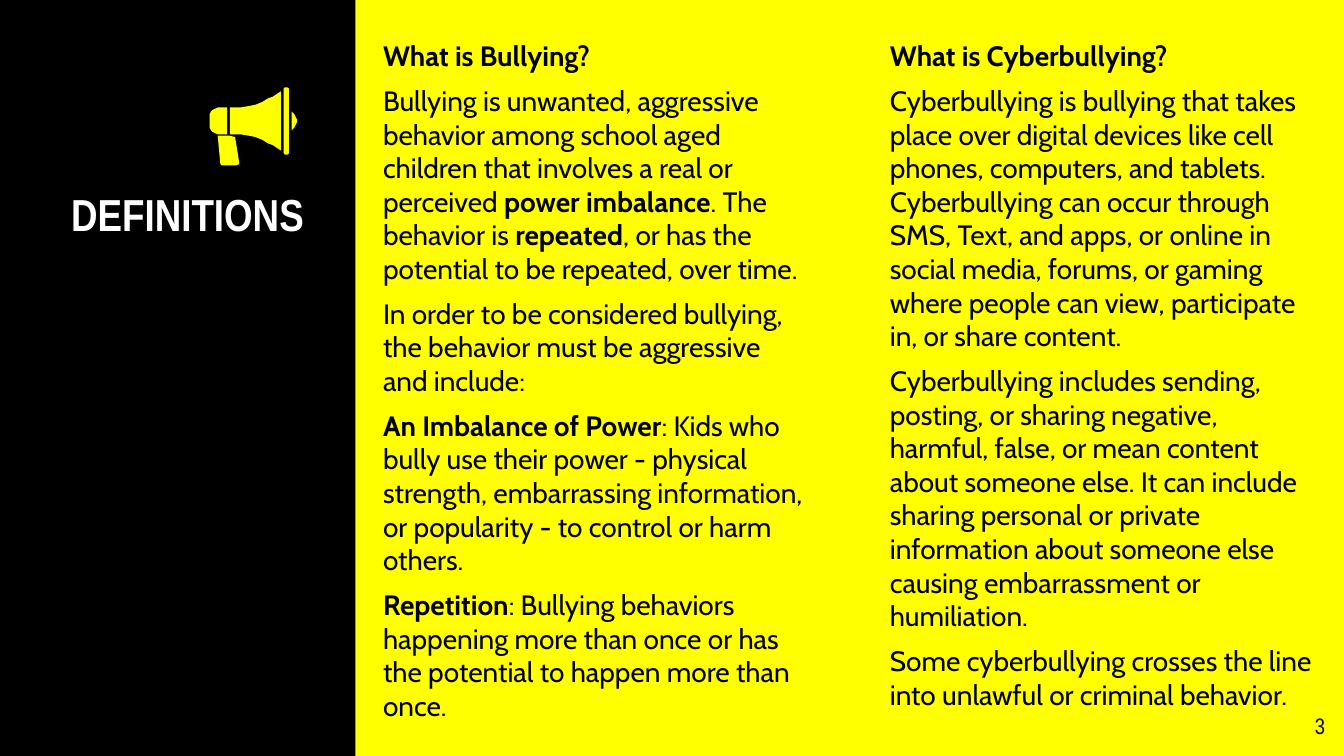
import pptx
import pptx.util
import pptx.dml.color
import pptx.enum.shapes
import pptx.enum.text
import pptx.oxml.ns
import lxml.etree

Pt = pptx.util.Pt
ALIGN = pptx.enum.text.PP_ALIGN
ANCHOR = pptx.enum.text.MSO_ANCHOR

COLORS = {"yellow": "FFFF00", "black": "000000", "white": "FFFFFF"}
HEADING_FONT = "Arial Narrow"
BODY_FONT = "Cabin"

BULLYING = [
    "**What is Bullying?**",
    "Bullying is unwanted, aggressive behavior among school aged children that involves "
    "a real or perceived **power imbalance**. The behavior is **repeated**, or has the "
    "potential to be repeated, over time.",
    "In order to be considered bullying, the behavior must be aggressive and include:",
    "**An Imbalance of Power**: Kids who bully use their power - physical strength, "
    "embarrassing information, or popularity - to control or harm others.",
    "**Repetition**: Bullying behaviors happening more than once or has the potential "
    "to happen more than once.",
]
CYBERBULLYING = [
    "**What is Cyberbullying?**",
    "Cyberbullying is bullying that takes place over digital devices like cell phones, "
    "computers, and tablets. Cyberbullying can occur through SMS, Text, and apps, or "
    "online in social media, forums, or gaming where people can view, participate in, "
    "or share content.",
    "Cyberbullying includes sending, posting, or sharing negative, harmful, false, or "
    "mean content about someone else. It can include sharing personal or private "
    "information about someone else causing embarrassment or humiliation.",
    "Some cyberbullying crosses the line into unlawful or criminal behavior.",
]

MEGAPHONE_UNIT = Pt(0.72)
HANDLE = [(162, 101), (164, 122), (165, 123), (176, 123), (178, 122), (178, 121),
          (175, 102), (171, 101)]
UPPER_HALVES = {
    "knob": [(217, 83), (218, 84), (219, 85), (220, 87), (221, 89)],
    "back": [(169, 80), (162, 80), (160, 81), (158, 82), (157, 83), (156, 85)],
    "cone": [(209, 68), (206, 70), (203, 72), (200, 73), (195, 76), (190, 78),
             (185, 79), (179, 80), (171, 80)],
    "rim": [(214, 65), (212, 65), (211, 66)],
}
RIM_RIGHT = [(215, 66)]


def mirrored(upper, axis=90):
    return upper + [(x, 2 * axis - y) for x, y in reversed(upper)]


class SlideBuilder:
    def __init__(self, deck):
        self.slide = deck.slides.add_slide(deck.slide_layouts[3])
        self.paint(self.slide.background.fill, "yellow")

    def paint(self, fill, color):
        fill.solid()
        fill.fore_color.rgb = pptx.dml.color.RGBColor.from_string(COLORS[color])

    def style_shape(self, shape, color):
        self.paint(shape.fill, color)
        shape.line.fill.background()
        shape.shadow.inherit = False

    def place(self, box, left, top, width, height, anchor=ANCHOR.TOP):
        box.left, box.top = Pt(left), Pt(top)
        box.width, box.height = Pt(width), Pt(height)
        frame = box.text_frame
        frame.word_wrap = True
        frame.auto_size = pptx.enum.text.MSO_AUTO_SIZE.NONE
        frame.vertical_anchor = anchor
        frame.margin_left = frame.margin_right = Pt(7.2)
        frame.margin_top = frame.margin_bottom = Pt(7.2)
        return frame

    def add_span(self, para, text, font, size, color, bold=False):
        span = para.add_run()
        span.text = text
        span.font.name, span.font.size, span.font.bold = font, Pt(size), bold
        span.font.color.rgb = pptx.dml.color.RGBColor.from_string(COLORS[color])

    def panel(self, left, top, width, height):
        panel = self.slide.shapes.add_shape(
            pptx.enum.shapes.MSO_SHAPE.RECTANGLE, Pt(left), Pt(top), Pt(width), Pt(height))
        self.style_shape(panel, "black")
        self.slide.shapes._spTree.insert(2, panel._element)

    def title(self, text, *bounds):
        para = self.place(self.slide.shapes.title, *bounds).paragraphs[0]
        para.alignment = ALIGN.RIGHT
        para.line_spacing = 1.15
        self.add_span(para, text, HEADING_FONT, 24, "white", True)

    def column(self, index, texts, *bounds):
        frame = self.place(self.slide.placeholders[index], *bounds)
        for number, text in enumerate(texts):
            para = frame.add_paragraph() if number else frame.paragraphs[0]
            para.space_before = Pt(6)
            properties = para._p.get_or_add_pPr()
            properties.set("marL", "0")
            properties.set("indent", "0")
            lxml.etree.SubElement(properties, pptx.oxml.ns.qn("a:buNone"))
            for part, words in enumerate(text.split("**")):
                if words:
                    self.add_span(para, words, BODY_FONT, 15, "black", part % 2 == 1)

    def page_number(self, text, *bounds):
        box = self.slide.shapes.add_textbox(0, 0, 0, 0)
        para = self.place(box, *bounds, anchor=ANCHOR.MIDDLE).paragraphs[0]
        para.alignment = ALIGN.RIGHT
        self.add_span(para, text, HEADING_FONT, 12, "black")

    def icon(self, outlines):
        group = self.slide.shapes.add_group_shape()
        for points in outlines:
            builder = group.shapes.build_freeform(*points[0], scale=MEGAPHONE_UNIT)
            builder.add_line_segments(points[1:], close=True)
            self.style_shape(builder.convert_to_shape(), "yellow")


def main():
    deck = pptx.Presentation()
    deck.slide_width, deck.slide_height = Pt(720), Pt(405)
    page = SlideBuilder(deck)
    page.panel(0, 0, 190.5, 405)
    page.title("DEFINITIONS", 25, 88.5, 145, 116.5)
    halves = {name: mirrored(upper) for name, upper in UPPER_HALVES.items()}
    halves["rim"] += mirrored(RIM_RIGHT)[::-1]
    page.icon([HANDLE, *halves.values()])
    for index, (left, texts) in enumerate([(198, BULLYING), (469.5, CYBERBULLYING)], 1):
        page.column(index, texts, left, 13.5, 242.5, 391.5)
    page.page_number("3", 674, 373.5, 43, 31)
    deck.save("out.pptx")


if __name__ == "__main__":
    main()
